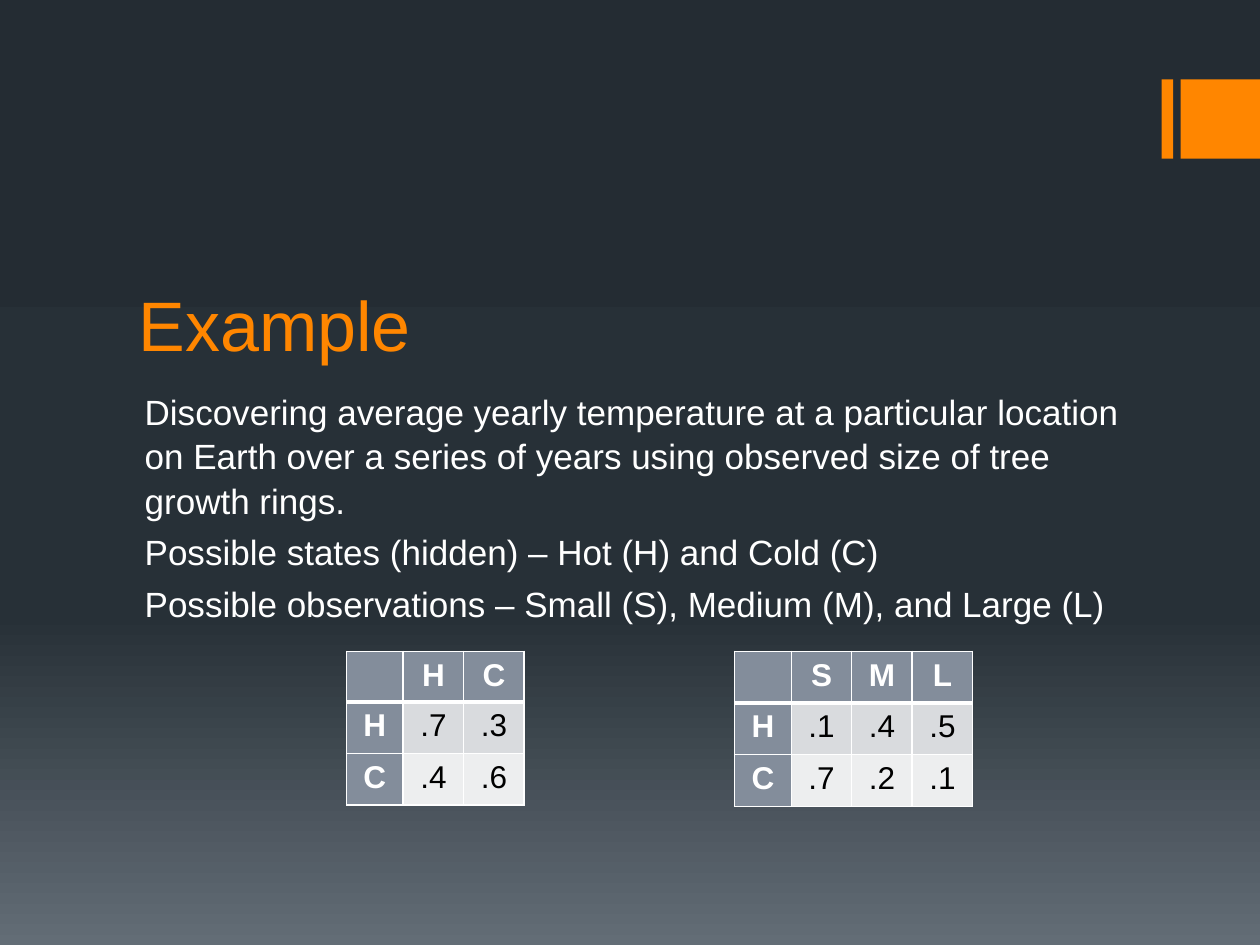
from lxml import etree
from pptx import Presentation
from pptx.dml.color import RGBColor
from pptx.enum.shapes import MSO_SHAPE
from pptx.enum.text import MSO_ANCHOR, PP_ALIGN
from pptx.oxml import parse_xml
from pptx.oxml.ns import nsdecls, qn
from pptx.util import Inches, Pt

RECT = MSO_SHAPE.RECTANGLE
BOTTOM, TOP = MSO_ANCHOR.BOTTOM, MSO_ANCHOR.TOP
LEFT, CENTER = PP_ALIGN.LEFT, PP_ALIGN.CENTER

FONT = "Arial"
COLORS = {
    "accent": "FF8600",
    "white": "FFFFFF",
    "black": "000000",
    "header": "838D9B",
    "band_dark": "D9DBDE",
    "band_light": "EDEEEF",
}
BACKGROUND_STOPS = [(0, "242C33"), (65, "273037"), (100, "636D76")]

BODY = [
    "Discovering average yearly temperature at a particular location on Earth "
    "over a series of years using observed size of tree growth rings.",
    "Possible states (hidden) – Hot (H) and Cold (C)",
    "Possible observations – Small (S), Medium (M), and Large (L)",
]
TRANSITIONS = [["", "H", "C"], ["H", ".7", ".3"], ["C", ".4", ".6"]]
EMISSIONS = [["", "S", "M", "L"], ["H", ".1", ".4", ".5"], ["C", ".7", ".2", ".1"]]


def rgb(name):
    return RGBColor.from_string(COLORS[name])


def write_text(tf, lines, size=18, color="white", bold=False, align=LEFT,
               anchor=TOP, indent=0, before=0, spacing=1.0):
    tf.word_wrap = True
    tf.vertical_anchor = anchor
    for i, line in enumerate(lines):
        p = tf.add_paragraph() if i else tf.paragraphs[0]
        p.alignment = align
        p.space_before = Pt(before)
        p.line_spacing = spacing
        if indent:
            p._p.get_or_add_pPr().set("marL", str(Inches(indent)))
        r = p.add_run()
        r.text = line
        r.font.name = FONT
        r.font.size = Pt(size)
        r.font.bold = bold
        r.font.color.rgb = rgb(color)


def set_background(s):
    fill = s.background.fill
    fill.gradient()
    fill.gradient_angle = 270
    stops = fill._fill._gradFill.find(qn("a:gsLst"))
    for stop in list(stops):
        stops.remove(stop)
    for position, color in BACKGROUND_STOPS:
        gs = etree.SubElement(stops, qn("a:gs"), pos=str(position * 1000))
        etree.SubElement(gs, qn("a:srgbClr"), val=color)


def add_corner_mark(s, left, top, size):
    """A thin bar and a square that meets the right edge of the slide."""
    for offset, width in ((0, 0.09), (0.15, size)):
        sp = s.shapes.add_shape(RECT, Inches(left + offset), Inches(top),
                                Inches(width), Inches(size))
        sp.shadow.inherit = False
        sp.fill.solid()
        sp.fill.fore_color.rgb = rgb("accent")
        sp.line.fill.background()


def add_title(s, left, top, width, height):
    title = s.shapes.title
    title.left, title.top = Inches(left), Inches(top)
    title.width, title.height = Inches(width), Inches(height)
    write_text(title.text_frame, ["Example"], size=40, color="accent", anchor=BOTTOM)


def add_body(s, left, top, width, height):
    box = s.shapes.add_textbox(Inches(left), Inches(top), Inches(width), Inches(height))
    write_text(box.text_frame, BODY, size=20, indent=0.05, before=4, spacing=1.06)


def set_borders(cell, top, bottom):
    tcPr = cell._tc.get_or_add_tcPr()
    for side, width in (("L", 1), ("R", 1), ("T", top), ("B", bottom)):
        tcPr.append(parse_xml(
            f'<a:ln{side} {nsdecls("a")} w="{Pt(width)}"><a:solidFill>'
            f'<a:srgbClr val="{COLORS["white"]}"/></a:solidFill></a:ln{side}>'))


def add_probability_table(s, left, top, rows, head_height):
    widths = [0.45] + [0.48] * (len(rows[0]) - 1)
    heights = [head_height] + [0.41] * (len(rows) - 1)
    table = s.shapes.add_table(len(rows), len(widths), Inches(left), Inches(top),
                               Inches(sum(widths)), Inches(sum(heights))).table
    for column, width in zip(table.columns, widths):
        column.width = Inches(width)
    for row, height in zip(table.rows, heights):
        row.height = Inches(height)
    for i, row in enumerate(rows):
        for j, value in enumerate(row):
            cell = table.cell(i, j)
            is_head = i == 0 or j == 0
            set_borders(cell, top=3 if i == 1 else 1, bottom=3 if i == 0 else 1)
            band = "band_dark" if i % 2 else "band_light"
            cell.fill.solid()
            cell.fill.fore_color.rgb = rgb("header" if is_head else band)
            if value:
                write_text(cell.text_frame, [value], bold=is_head, align=CENTER,
                           color="white" if is_head else "black")


def main():
    prs = Presentation()
    prs.slide_width, prs.slide_height = Inches(10), Inches(7.5)
    s = prs.slides.add_slide(prs.slide_layouts.get_by_name("Title Only"))
    set_background(s)
    add_corner_mark(s, 9.22, 0.63, 0.63)
    add_title(s, 1, 1.69, 8, 1.26)
    add_body(s, 1, 3.03, 8, 3.87)
    add_probability_table(s, 2.75, 5.17, TRANSITIONS, head_height=0.32)
    add_probability_table(s, 5.83, 5.17, EMISSIONS, head_height=0.41)
    prs.save("out.pptx")


if __name__ == "__main__":
    main()
